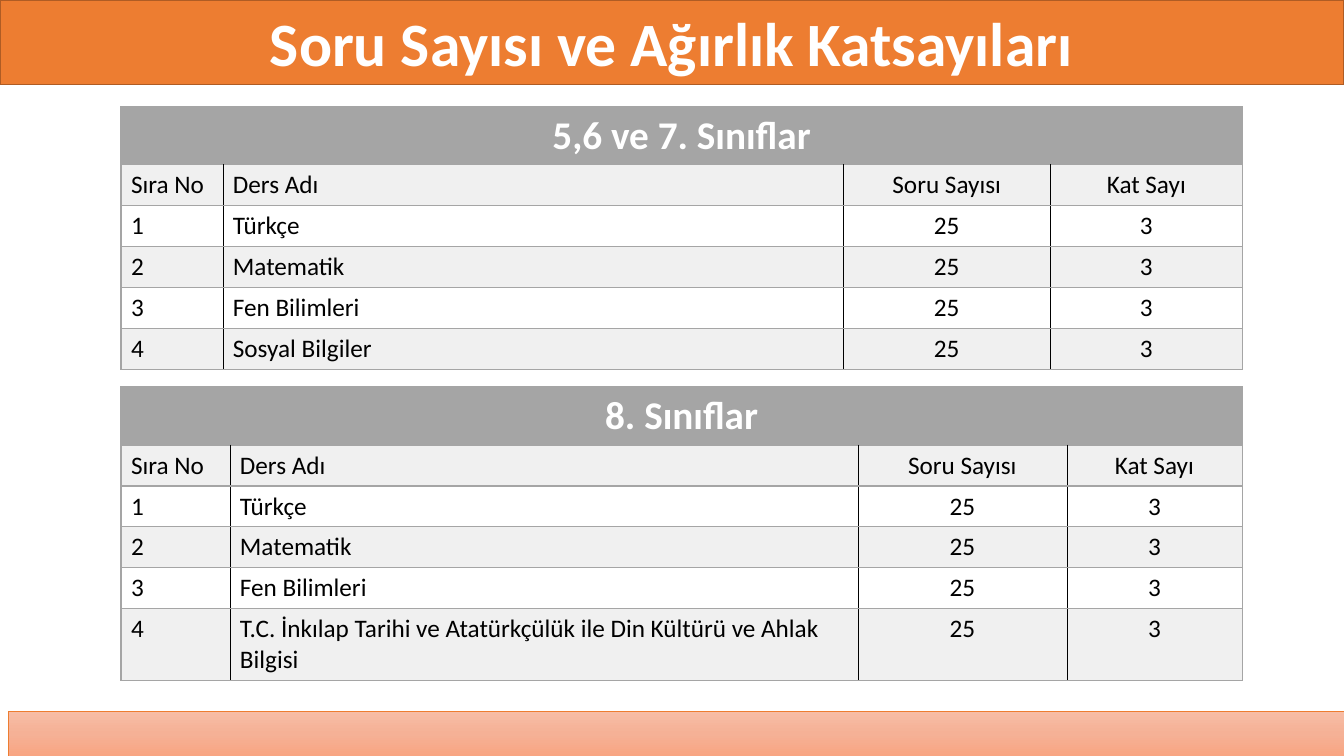
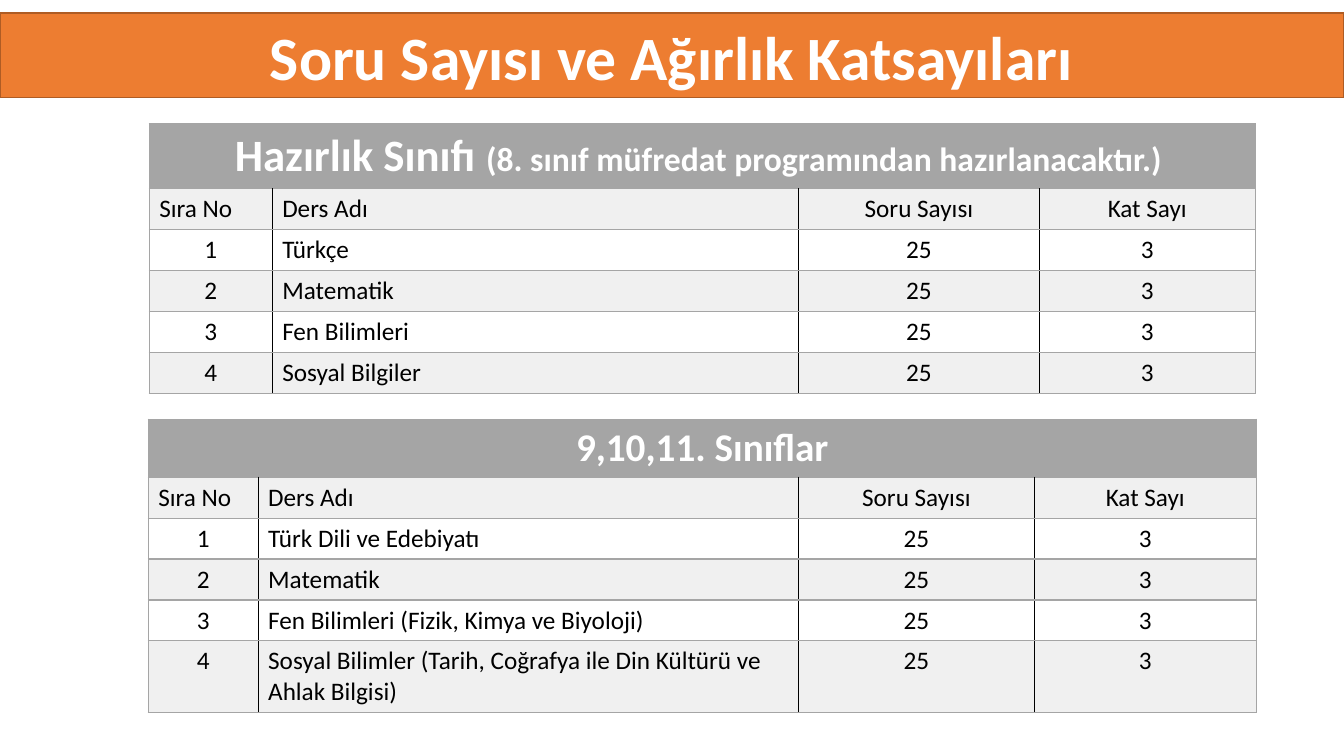
from copy import deepcopy

from lxml.etree import SubElement
from pptx import Presentation
from pptx.dml.color import RGBColor
from pptx.enum.shapes import MSO_SHAPE
from pptx.enum.text import MSO_ANCHOR, MSO_AUTO_SIZE, PP_ALIGN
from pptx.oxml.ns import qn
from pptx.util import Inches, Pt

FONT = "Calibri"
COLORS = {
    "orange": "ED7D31",
    "orange_dark": "AF5C24",
    "gray": "A5A5A5",
    "band": "F0F0F0",
    "white": "FFFFFF",
    "black": "000000",
}
FOOTER_GRADIENT = ["F7BDA5", "F5B196", "F8A582"]

SLIDE_WIDTH, SLIDE_HEIGHT = 13.33, 7.5
TITLE_HEIGHT = 0.84
ROW_HEIGHT, TALL_ROW_HEIGHT = 0.4, 0.7

TITLE = "Soru Sayısı ve Ağırlık Katsayıları"
HEADINGS = ["Sıra No", "Ders Adı", "Soru Sayısı", "Kat Sayı"]
QUESTIONS, COEFFICIENT = "25", "3"

# A caption is a list of (text, size) pairs; the last lesson may need two lines.
SLIDES = [
    {
        "title_top": 0,
        "footer": True,
        "number_align": PP_ALIGN.LEFT,
        "tables": [
            {
                "caption": [("5,6 ve 7. Sınıflar", 28)],
                "lessons": ["Türkçe", "Matematik", "Fen Bilimleri", "Sosyal Bilgiler"],
                "position": (1.2, 1.06),
                "columns": [1.01, 6.15, 2.06, 1.9],
                "caption_height": 0.57,
                "last_height": ROW_HEIGHT,
            },
            {
                "caption": [("8. Sınıflar", 28)],
                "lessons": [
                    "Türkçe",
                    "Matematik",
                    "Fen Bilimleri",
                    "T.C. İnkılap Tarihi ve Atatürkçülük ile Din Kültürü ve Ahlak Bilgisi",
                ],
                "position": (1.2, 3.84),
                "columns": [1.08, 6.23, 2.07, 1.74],
                "caption_height": 0.57,
                "last_height": TALL_ROW_HEIGHT,
            },
        ],
    },
    {
        "title_top": 0.13,
        "footer": False,
        "number_align": PP_ALIGN.CENTER,
        "tables": [
            {
                "caption": [
                    ("Hazırlık Sınıfı ", 32),
                    ("(8. sınıf müfredat programından hazırlanacaktır.) ", 24),
                ],
                "lessons": ["Türkçe", "Matematik", "Fen Bilimleri", "Sosyal Bilgiler"],
                "position": (1.48, 1.23),
                "columns": [1.22, 5.22, 2.39, 2.14],
                "caption_height": 0.64,
                "last_height": ROW_HEIGHT,
            },
            {
                "caption": [("9,10,11. Sınıflar", 28)],
                "lessons": [
                    "Türk Dili ve Edebiyatı",
                    "Matematik",
                    "Fen Bilimleri (Fizik, Kimya ve Biyoloji)",
                    "Sosyal Bilimler (Tarih, Coğrafya ile Din Kültürü ve Ahlak Bilgisi)",
                ],
                "position": (1.47, 4.16),
                "columns": [1.09, 5.36, 2.34, 2.2],
                "caption_height": 0.57,
                "last_height": TALL_ROW_HEIGHT,
            },
        ],
    },
]


def rgb(name):
    return RGBColor.from_string(COLORS[name])


def style_font(font, size, color, bold):
    font.name = FONT
    font.size = Pt(size)
    font.bold = bold
    font.color.rgb = rgb(color)


def add_title(slide, top):
    title = slide.shapes.title
    title.left, title.top = Inches(0), Inches(top)
    title.width, title.height = Inches(SLIDE_WIDTH), Inches(TITLE_HEIGHT)
    title.fill.solid()
    title.fill.fore_color.rgb = rgb("orange")
    title.line.color.rgb = rgb("orange_dark")
    title.line.width = Pt(1)
    frame = title.text_frame
    frame.text = TITLE
    frame.auto_size = MSO_AUTO_SIZE.NONE
    frame.vertical_anchor = MSO_ANCHOR.MIDDLE
    paragraph = frame.paragraphs[0]
    paragraph.alignment = PP_ALIGN.CENTER
    style_font(paragraph.font, 44, "white", True)


def add_footer(slide):
    left, top = 0.08, 7.06
    footer = slide.shapes.add_shape(
        MSO_SHAPE.RECTANGLE, Inches(left), Inches(top),
        Inches(SLIDE_WIDTH - left), Inches(SLIDE_HEIGHT - top),
    )
    footer.shadow.inherit = False
    footer.line.color.rgb = rgb("orange")
    footer.line.width = Pt(0.5)
    footer.fill.gradient()
    footer.fill.gradient_angle = 270
    stop_list = footer.element.spPr.find(qn("a:gradFill")).find(qn("a:gsLst"))
    stop_list.insert(1, deepcopy(stop_list[0]))
    for index, (stop, color) in enumerate(zip(footer.fill.gradient_stops, FOOTER_GRADIENT)):
        stop.position = index / (len(FOOTER_GRADIENT) - 1)
        stop.color.rgb = RGBColor.from_string(color)


def style_cell(cell, fill, left="gray", right="gray"):
    """Fill the cell and draw its four edges; black edges are hairlines."""
    properties = cell._tc.get_or_add_tcPr()
    for edge, color in (("L", left), ("R", right), ("T", "gray"), ("B", "gray")):
        width = Pt(0.25) if color == "black" else Pt(1)
        line = SubElement(properties, qn(f"a:ln{edge}"), w=str(int(width)))
        solid = SubElement(line, qn("a:solidFill"))
        SubElement(solid, qn("a:srgbClr"), val=COLORS[color])
    cell.fill.solid()
    cell.fill.fore_color.rgb = rgb(fill)


def add_caption(table, caption):
    cells = list(table.rows[0].cells)
    for cell in cells:
        style_cell(cell, "gray")
    cells[0].merge(cells[-1])
    paragraph = cells[0].text_frame.paragraphs[0]
    paragraph.alignment = PP_ALIGN.CENTER
    for text, size in caption:
        run = paragraph.add_run()
        run.text = text
        style_font(run.font, size, "white", True)


def add_lesson_table(slide, content, number_align):
    rows = [HEADINGS] + [
        [str(number), lesson, QUESTIONS, COEFFICIENT]
        for number, lesson in enumerate(content["lessons"], start=1)
    ]
    widths = content["columns"]
    heights = [content["caption_height"]] + [ROW_HEIGHT] * (len(rows) - 1) + [content["last_height"]]
    left, top = content["position"]
    table = slide.shapes.add_table(
        len(heights), len(widths), Inches(left), Inches(top),
        Inches(sum(widths)), Inches(sum(heights)),
    ).table
    table.horz_banding = False
    for column, width in zip(table.columns, widths):
        column.width = Inches(width)
    for row, height in zip(table.rows, heights):
        row.height = Inches(height)

    add_caption(table, content["caption"])
    last = len(widths) - 1
    for row_index, values in enumerate(rows):
        first_align = number_align if row_index else PP_ALIGN.LEFT
        alignments = [first_align, PP_ALIGN.LEFT, PP_ALIGN.CENTER, PP_ALIGN.CENTER]
        for column_index, (value, alignment) in enumerate(zip(values, alignments)):
            cell = table.cell(row_index + 1, column_index)
            style_cell(
                cell,
                "white" if row_index % 2 else "band",
                left="black" if column_index > 0 else "gray",
                right="black" if column_index < last else "gray",
            )
            cell.text = value
            paragraph = cell.text_frame.paragraphs[0]
            paragraph.alignment = alignment
            style_font(paragraph.font, 18, "black", False)


def main():
    presentation = Presentation()
    presentation.slide_width = Inches(SLIDE_WIDTH)
    presentation.slide_height = Inches(SLIDE_HEIGHT)
    title_only = presentation.slide_layouts.get_by_name("Title Only")
    for content in SLIDES:
        slide = presentation.slides.add_slide(title_only)
        add_title(slide, content["title_top"])
        if content["footer"]:
            add_footer(slide)
        for table_content in content["tables"]:
            add_lesson_table(slide, table_content, content["number_align"])
    presentation.save("out.pptx")


if __name__ == "__main__":
    main()
